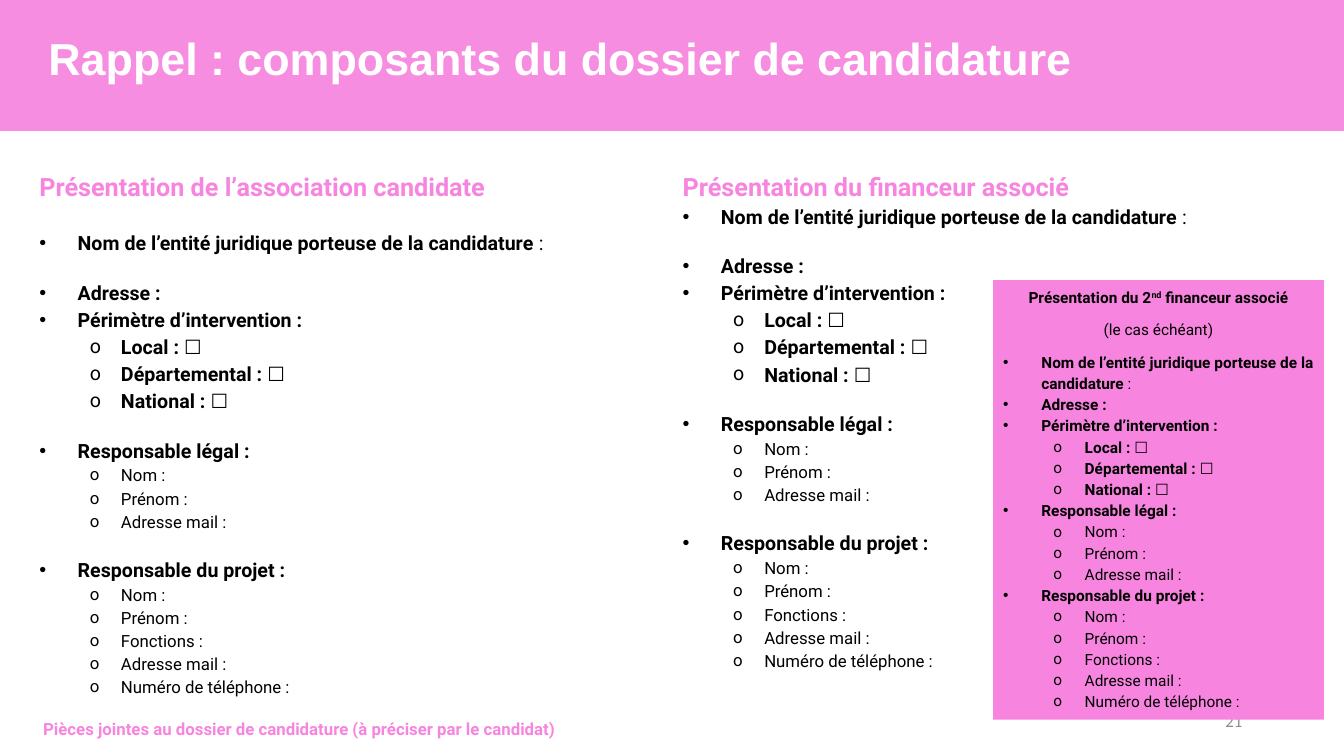
from lxml import etree
from pptx import Presentation
from pptx.dml.color import RGBColor
from pptx.enum.shapes import MSO_SHAPE
from pptx.enum.text import MSO_ANCHOR, MSO_AUTO_SIZE, PP_ALIGN
from pptx.oxml.ns import qn
from pptx.util import Inches, Pt

RECTANGLE = MSO_SHAPE.RECTANGLE
TOP, MIDDLE = MSO_ANCHOR.TOP, MSO_ANCHOR.MIDDLE
NO_AUTOFIT = MSO_AUTO_SIZE.NONE
LEFT, CENTER = PP_ALIGN.LEFT, PP_ALIGN.CENTER
RIGHT, JUSTIFY = PP_ALIGN.RIGHT, PP_ALIGN.JUSTIFY

PINK, BLACK, WHITE, GREY = "F785DF", "000000", "FFFFFF", "8C8C8C"
TWO_CONTENT_LAYOUT = 3
LINE_12, LINE_14 = 16.2, 18.9

ENTITY = "Nom de l’entité juridique porteuse de la candidature"
SCOPE = "Périmètre d’intervention :"
SECTIONS = [
    (ENTITY, []),
    ("Adresse :", []),
    (SCOPE, ["Local : ", "Départemental : ", "National : "]),
    ("Responsable légal : ", ["Nom :", "Prénom :", "Adresse mail :"]),
    ("Responsable du projet : ",
     ["Nom : ", "Prénom : ", "Fonctions :", "Adresse mail : ", "Numéro de téléphone :"]),
]


def rgb(color):
    return RGBColor.from_string(color)


def place(shape, box):
    shape.left, shape.top, shape.width, shape.height = (Inches(length) for length in box)


def prepare(frame, anchor=TOP):
    frame.word_wrap = True
    frame.auto_size = NO_AUTOFIT
    frame.vertical_anchor = anchor
    return frame


def add_run(paragraph, text, size, color=BLACK, bold=False, font="Roboto"):
    run = paragraph.add_run()
    run.text = text
    run.font.size = Pt(size)
    run.font.name = font
    run.font.bold = bold
    run.font.color.rgb = rgb(color)
    return run


def add_paragraph(frame, align, before=0, after=0, spacing=1.15):
    first = frame.paragraphs[0]
    paragraph = frame.add_paragraph() if first.runs else first
    paragraph.alignment = align
    paragraph.line_spacing = spacing
    paragraph.space_before = Pt(before)
    paragraph.space_after = Pt(after)
    return paragraph


def set_bullet(paragraph, character=None, margin=0, hanging=0):
    properties = paragraph._p.get_or_add_pPr()
    properties.set("marL", str(Inches(margin)))
    properties.set("indent", str(-Inches(hanging)))
    if character is None:
        etree.SubElement(properties, qn("a:buNone"))
        return
    font = "Arial" if character == "•" else "Roboto"
    etree.SubElement(properties, qn("a:buFont")).set("typeface", font)
    etree.SubElement(properties, qn("a:buChar")).set("char", character)


def add_outline(frame, gaps, heading_size, detail_size):
    for (heading, details), gap in zip(SECTIONS, gaps):
        paragraph = add_paragraph(frame, JUSTIFY, before=gap)
        set_bullet(paragraph, "•", 0.38, 0.38)
        add_run(paragraph, heading, heading_size, bold=True)
        if heading == ENTITY:
            add_run(paragraph, " : ", heading_size)
        for detail in details:
            item = add_paragraph(frame, JUSTIFY)
            item.level = 1
            set_bullet(item, "o", 0.81, 0.31)
            if heading == SCOPE:
                add_run(item, detail, heading_size, bold=True)
                add_run(item, "☐", heading_size, bold=True, font="Cabin")
            else:
                add_run(item, detail, detail_size)


def add_rectangle(slide, box):
    rectangle = slide.shapes.add_shape(RECTANGLE, *(Inches(length) for length in box))
    rectangle.shadow.inherit = False
    rectangle.fill.solid()
    rectangle.fill.fore_color.rgb = rgb(PINK)
    rectangle.line.fill.background()
    return rectangle


def add_banner(slide, box):
    left, top, width, _ = box
    band = add_rectangle(slide, box)
    color = band._element.spPr.find(qn("a:solidFill"))[0]
    etree.SubElement(color, qn("a:alpha")).set("val", "93000")
    slide.shapes._spTree.insert(2, band._element)

    title = slide.shapes.title
    place(title, (left + 0.38, top + 0.05, width, 1.12))
    frame = prepare(title.text_frame, MIDDLE)
    paragraph = add_paragraph(frame, LEFT, spacing=0.9)
    add_run(paragraph, "Rappel : composants du dossier de candidature", 32, WHITE, True, "Arial")


def fill_column(placeholder, box, heading, gaps):
    place(placeholder, box)
    frame = prepare(placeholder.text_frame)
    paragraph = add_paragraph(frame, JUSTIFY)
    set_bullet(paragraph)
    add_run(paragraph, heading, 18, PINK, True)
    add_outline(frame, gaps, 14, 12)


def add_second_funder(slide, box):
    frame = prepare(add_rectangle(slide, box).text_frame)
    heading = add_paragraph(frame, CENTER, after=8)
    add_run(heading, "Présentation du 2", 11, bold=True)
    ordinal = add_run(heading, "nd", 11, bold=True)
    ordinal.font._element.set("baseline", "30000")
    add_run(heading, " financeur associé", 11, bold=True)
    add_run(add_paragraph(frame, CENTER, after=8), "(le cas échéant)", 11)
    add_outline(frame, [0] * len(SECTIONS), 11, 11)


def add_label(slide, box, text, align, anchor, spacing, **style):
    label = slide.shapes.add_textbox(*(Inches(length) for length in box))
    frame = prepare(label.text_frame, anchor)
    add_run(add_paragraph(frame, align, spacing=spacing), text, 12, **style)


def build_application_slide(presentation):
    slide = presentation.slides.add_slide(presentation.slide_layouts[TWO_CONTENT_LAYOUT])
    add_banner(slide, (0, 0, 13.33, 1.3))
    section_gaps = [LINE_12, 0, LINE_12, LINE_12]
    fill_column(slide.placeholders[1], (0.29, 1.6, 6.37, 5.54),
                "Présentation de l’association candidate", [LINE_14] + section_gaps)
    fill_column(slide.placeholders[2], (6.67, 1.6, 6.37, 5.62),
                "Présentation du financeur associé", [0] + section_gaps)
    add_label(slide, (9.42, 6.95, 3, 0.4), "21", RIGHT, MIDDLE, 1,
              color=GREY, font="Calibri")
    add_second_funder(slide, (9.85, 2.78, 3.28, 4.36))
    add_label(slide, (0.33, 7.05, 6.86, 0.32),
              "Pièces jointes au dossier de candidature (à préciser par le candidat)",
              LEFT, TOP, 1.15, color=PINK, bold=True)


def main():
    presentation = Presentation()
    presentation.slide_width = Inches(13.33)
    presentation.slide_height = Inches(7.5)
    build_application_slide(presentation)
    presentation.save("out.pptx")


if __name__ == "__main__":
    main()
